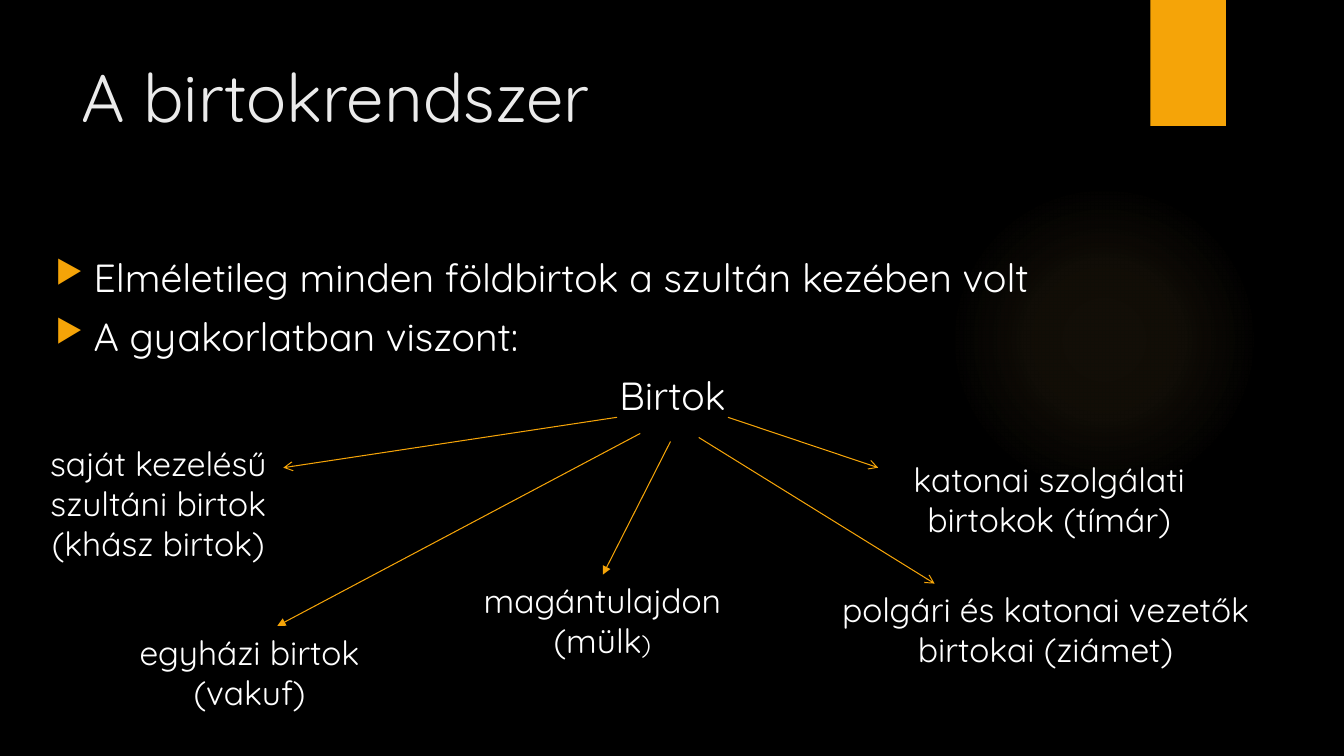
import pptx
import pptx.util
import pptx.dml.color
import pptx.enum.shapes
import pptx.enum.text
import pptx.oxml
import pptx.oxml.ns
from lxml import etree

Inches = pptx.util.Inches
Pt = pptx.util.Pt
RGBColor = pptx.dml.color.RGBColor
Shape = pptx.enum.shapes.MSO_SHAPE
Align = pptx.enum.text.PP_ALIGN

BLACK = RGBColor(0x00, 0x00, 0x00)
WHITE = RGBColor(0xFF, 0xFF, 0xFF)
TITLE_GREY = RGBColor(0xEB, 0xEB, 0xEB)
AMBER = RGBColor(0xF5, 0xA4, 0x08)
GLOW = RGBColor(0xFA, 0xC9, 0x6A)


class SlideBuilder:
    font_name = "Quicksand"

    def __init__(self, slide):
        self.slide = slide
        slide.background.fill.solid()
        slide.background.fill.fore_color.rgb = BLACK

    def shape(self, kind, left, top, width, height):
        shape = self.slide.shapes.add_shape(
            kind, Inches(left), Inches(top), Inches(width), Inches(height))
        shape.shadow.inherit = False
        shape.line.fill.background()
        return shape

    def bar(self, left, top, width, height):
        shape = self.shape(Shape.RECTANGLE, left, top, width, height)
        shape.fill.solid()
        shape.fill.fore_color.rgb = AMBER

    def glow(self, left, top, size, stops):
        shape = self.shape(Shape.OVAL, left, top, size, size)
        shape.fill.background()
        stop_xml = "".join(
            f'<a:gs pos="{position * 1000}"><a:srgbClr val="{GLOW}">'
            f'<a:alpha val="{alpha * 1000}"/></a:srgbClr></a:gs>'
            for position, alpha in stops)
        gradient = pptx.oxml.parse_xml(
            f'<a:gradFill {pptx.oxml.ns.nsdecls("a")} rotWithShape="1">'
            f'<a:gsLst>{stop_xml}</a:gsLst><a:path path="circle">'
            '<a:fillToRect l="50000" t="50000" r="50000" b="50000"/>'
            '</a:path></a:gradFill>')
        properties = shape.element.spPr
        properties.replace(properties.find(pptx.oxml.ns.qn("a:noFill")), gradient)

    def text(self, left, top, width, height, lines, size=24, color=WHITE,
             align=Align.CENTER):
        box = self.slide.shapes.add_textbox(
            Inches(left), Inches(top), Inches(width), Inches(height))
        frame = box.text_frame
        frame.word_wrap = True
        for index, line in enumerate(lines):
            paragraph = frame.paragraphs[0] if index == 0 else frame.add_paragraph()
            paragraph.text = line
            paragraph.alignment = align
            self.style(paragraph.font, size, color)
        return frame

    def style(self, font, size, color):
        font.name = self.font_name
        font.size = Pt(size)
        font.color.rgb = color

    def body(self, left, top, width, height, bullets, heading):
        frame = self.text(left, top, width, height, [], size=28)
        for index, line in enumerate([*bullets, heading]):
            paragraph = frame.paragraphs[0] if index == 0 else frame.add_paragraph()
            paragraph.text = line
            if index:
                paragraph.space_before = Pt(8.5)
            if index < len(bullets):
                self.bullet(paragraph)
            else:
                paragraph.alignment = Align.CENTER
            self.style(paragraph.font, 28, WHITE)

    def bullet(self, paragraph):
        properties = paragraph._p.get_or_add_pPr()
        properties.set("marL", str(Inches(0.38)))
        properties.set("indent", str(-Inches(0.38)))
        qn = pptx.oxml.ns.qn
        color = etree.SubElement(properties, qn("a:buClr"))
        etree.SubElement(color, qn("a:srgbClr"), val=str(AMBER))
        etree.SubElement(properties, qn("a:buSzPct"), val="80000")
        etree.SubElement(properties, qn("a:buChar"), char="▶")

    def arrow(self, start, end, head):
        connector = self.slide.shapes.add_connector(
            pptx.enum.shapes.MSO_CONNECTOR.STRAIGHT,
            *(Inches(value) for value in (*start, *end)))
        connector.line.color.rgb = AMBER
        connector.line.width = Pt(0.75)
        qn = pptx.oxml.ns.qn
        etree.SubElement(connector.line._get_or_add_ln(), qn("a:tailEnd"), type=head)
        etree.SubElement(connector.element.spPr, qn("a:effectLst"))


def main():
    presentation = pptx.Presentation()
    presentation.slide_width = Inches(13.33)
    presentation.slide_height = Inches(7.5)
    builder = SlideBuilder(presentation.slides.add_slide(presentation.slide_layouts[6]))

    builder.glow(9.41, 1.83, 3.08, [(0, 7), (36, 6), (69, 0), (100, 0)])
    builder.bar(11.41, 0, 0.75, 1.25)
    builder.text(0.71, 0.5, 10.29, 1.53, ["A birtokrendszer"], 48, TITLE_GREY, Align.LEFT)
    builder.body(
        0.45, 2.46, 12.44, 5.15,
        ["Elméletileg minden földbirtok a szultán kezében volt",
         "A gyakorlatban viszont:"],
        "Birtok")

    for start, end, head in [
        ((6.12, 4.14), (2.81, 4.64), "arrow"),
        ((6.93, 4.34), (9.27, 5.79), "arrow"),
        ((7.22, 4.14), (8.71, 4.64), "arrow"),
        ((6.35, 4.3), (2.75, 6.21), "triangle"),
        ((6.65, 4.38), (5.98, 5.7), "triangle"),
    ]:
        builder.arrow(start, end, head)

    for left, top, width, height, lines in [
        (8.01, 5.79, 4.72, 0.91, ["polgári és katonai vezetők birtokai (ziámet)"]),
        (8.86, 4.5, 3.09, 0.91, ["katonai szolgálati birtokok (tímár)"]),
        (-0.1, 4.34, 3.34, 1.31, ["saját kezelésű szultáni birtok", "(khász birtok)"]),
        (1, 6.22, 2.95, 0.91, ["egyházi birtok (vakuf)"]),
    ]:
        builder.text(left, top, width, height, lines)

    private_land = builder.text(4.56, 5.7, 2.83, 0.91, ["magántulajdon (mülk"])
    bracket = private_land.paragraphs[0].add_run()
    bracket.text = ")"
    builder.style(bracket.font, 18, WHITE)

    presentation.save("out.pptx")


if __name__ == "__main__":
    main()
